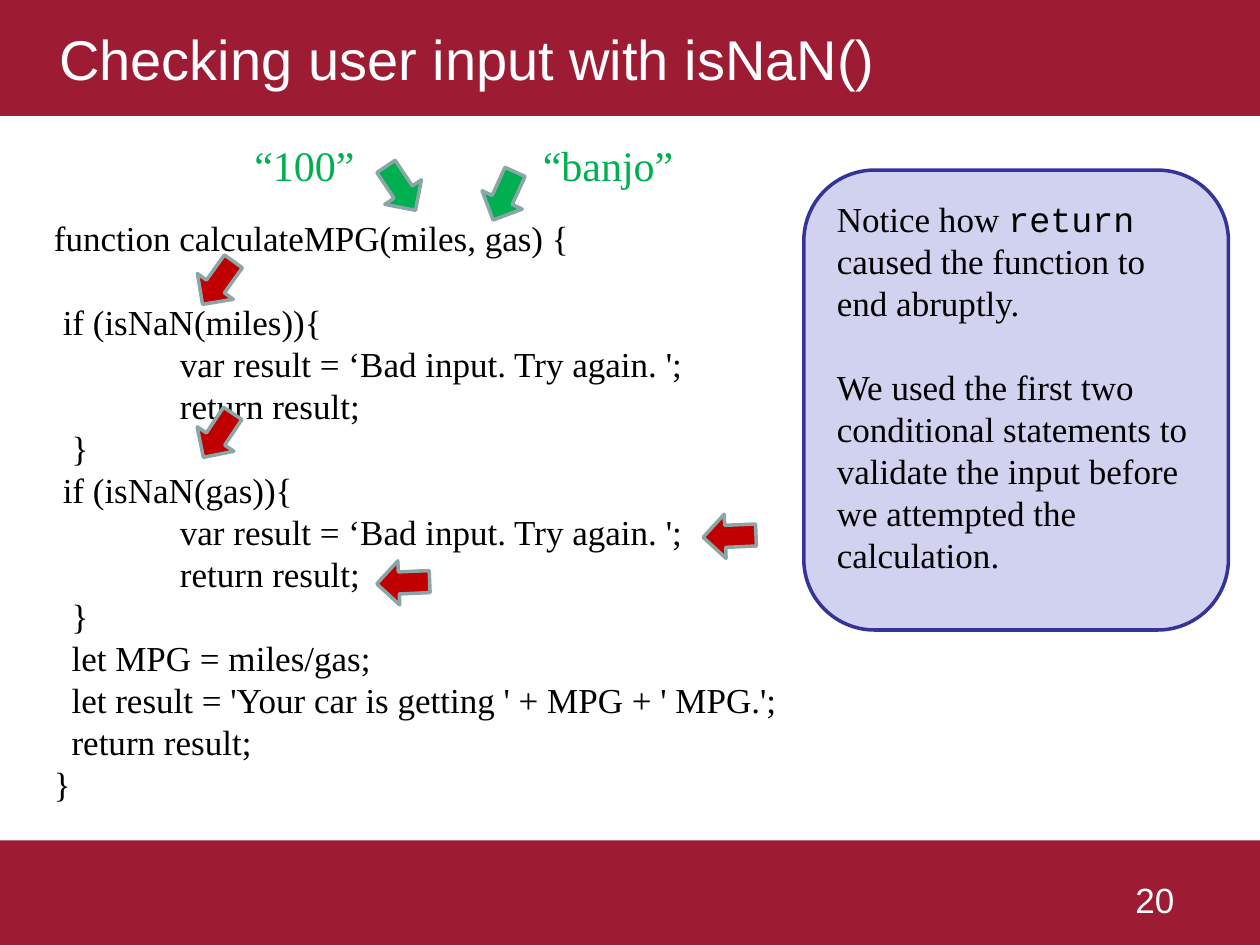
from pptx import Presentation
from pptx import util as u
from pptx.dml.color import RGBColor
from pptx.enum import shapes, text

CRIMSON = RGBColor(0x9E, 0x1B, 0x34)
WHITE = RGBColor(0xFF, 0xFF, 0xFF)
BLACK = RGBColor(0x00, 0x00, 0x00)
GREEN = RGBColor(0x00, 0xB0, 0x50)
RED = RGBColor(0xC0, 0x00, 0x00)
ARROW_EDGE = RGBColor(0x8A, 0xA6, 0xA8)
LAVENDER = RGBColor(0xD1, 0xD1, 0xF0)
INDIGO = RGBColor(0x33, 0x33, 0x99)

SANS, SERIF, MONO = "Arial", "Times New Roman", "Courier New"
LINE_FACTOR = 1.2

# Code lines with their left indents in inches
OUTER, TEST, BODY, BRANCH = 0, 0.07, 0.14, 1
BAD_INPUT = [
    (BRANCH, "var result = ‘Bad input. Try again. ';"),
    (BRANCH, "return result;"),
    (BODY, "}"),
]
CODE = [
    (OUTER, "function calculateMPG(miles, gas) {"),
    (TEST, "if (isNaN(miles)){"),
    *BAD_INPUT,
    (TEST, "if (isNaN(gas)){"),
    *BAD_INPUT,
    (BODY, "let MPG = miles/gas;"),
    (BODY, "let result = 'Your car is getting ' + MPG + ' MPG.';"),
    (BODY, "return result;"),
    (OUTER, "}"),
]

# Arrow left, top, rotation and colour
ARROWS = [
    (2.97, 1.32, 56.1, GREEN),
    (3.79, 1.38, 114.5, GREEN),
    (1.52, 2.07, 125.6, RED),
    (1.52, 3.28, 123.7, RED),
    (5.58, 4.08, 177.5, RED),
    (2.99, 4.45, 177.5, RED),
]


def add_block(slide, kind, box, fill, edge=None):
    shape = slide.shapes.add_shape(kind, *map(u.Inches, box))
    shape.shadow.inherit = False
    shape.fill.solid()
    shape.fill.fore_color.rgb = fill
    if edge is None:
        shape.line.fill.background()
    else:
        shape.line.color.rgb = edge
        shape.line.width = u.Pt(2)
    return shape


def add_text_box(slide, box):
    frame = slide.shapes.add_textbox(*map(u.Inches, box)).text_frame
    frame.word_wrap = True
    return frame


def style(paragraph, size, font, color, align=text.PP_ALIGN.LEFT):
    paragraph.alignment = align
    paragraph.line_spacing = u.Pt(size * LINE_FACTOR)
    paragraph.font.size = u.Pt(size)
    paragraph.font.name = font
    paragraph.font.color.rgb = color


def add_header(slide, box):
    band = add_block(slide, shapes.MSO_SHAPE.RECTANGLE, box, CRIMSON)
    frame = band.text_frame
    frame.vertical_anchor = text.MSO_ANCHOR.MIDDLE
    frame.margin_left = u.Inches(0.47)
    frame.text = "Checking user input with isNaN()"
    style(frame.paragraphs[0], 32, SANS, WHITE)


def add_footer(slide, box):
    left, top, width, _ = box
    add_block(slide, shapes.MSO_SHAPE.RECTANGLE, box, CRIMSON)
    frame = add_text_box(slide, (left + width - 2.83, top + 0.25, 2.33, 0.33))
    frame.margin_right = u.Inches(0.18)
    frame.text = "20"
    style(frame.paragraphs[0], 20, SANS, WHITE, text.PP_ALIGN.RIGHT)


def add_code(slide, box):
    frame = add_text_box(slide, box)
    frame.text = "\n".join(line for _, line in CODE)
    for paragraph, (indent, _) in zip(frame.paragraphs, CODE):
        style(paragraph, 20, SERIF, BLACK)
        paragraph._p.get_or_add_pPr().set("marL", str(u.Inches(indent)))
    # One line of space below the signature
    frame.paragraphs[1].space_before = u.Pt(20 * LINE_FACTOR)


def add_argument(slide, box, value):
    frame = add_text_box(slide, box)
    frame.text = value
    style(frame.paragraphs[0], 24, SERIF, GREEN)


def add_arrow(slide, left, top, rotation, color):
    arrow = add_block(slide, shapes.MSO_SHAPE.RIGHT_ARROW,
                      (left, top, 0.42, 0.35), color, ARROW_EDGE)
    arrow.rotation = rotation


def add_callout(slide, box):
    callout = add_block(slide, shapes.MSO_SHAPE.ROUNDED_RECTANGLE, box,
                        LAVENDER, INDIGO)
    frame = callout.text_frame
    frame.vertical_anchor = text.MSO_ANCHOR.TOP
    first, second = frame.paragraphs[0], frame.add_paragraph()
    for words in ("Notice how ", "return",
                  " caused the function to end abruptly."):
        run = first.add_run()
        run.text = words
    first.runs[1].font.name = MONO
    second.text = ("We used the first two conditional statements to validate "
                   "the input before we attempted the calculation.")
    for paragraph in (first, second):
        style(paragraph, 20, SERIF, BLACK)
    second.space_before = u.Pt(20 * LINE_FACTOR)


def main():
    presentation = Presentation()
    presentation.slide_width = u.Inches(10)
    presentation.slide_height = u.Inches(7.5)
    slide = presentation.slides.add_slide(presentation.slide_layouts[6])

    add_footer(slide, (0, 6.67, 10, 0.83))
    add_header(slide, (0, 0, 10, 0.92))
    add_code(slide, (0.33, 1.67, 6.83, 4.81))
    add_argument(slide, (1.92, 1.06, 1.11, 0.5), "“100”")
    add_argument(slide, (4.21, 1.06, 1.4, 0.5), "“banjo”")
    for arrow in ARROWS:
        add_arrow(slide, *arrow)
    add_callout(slide, (6.38, 1.35, 3.37, 3.65))

    presentation.save("out.pptx")


if __name__ == "__main__":
    main()
